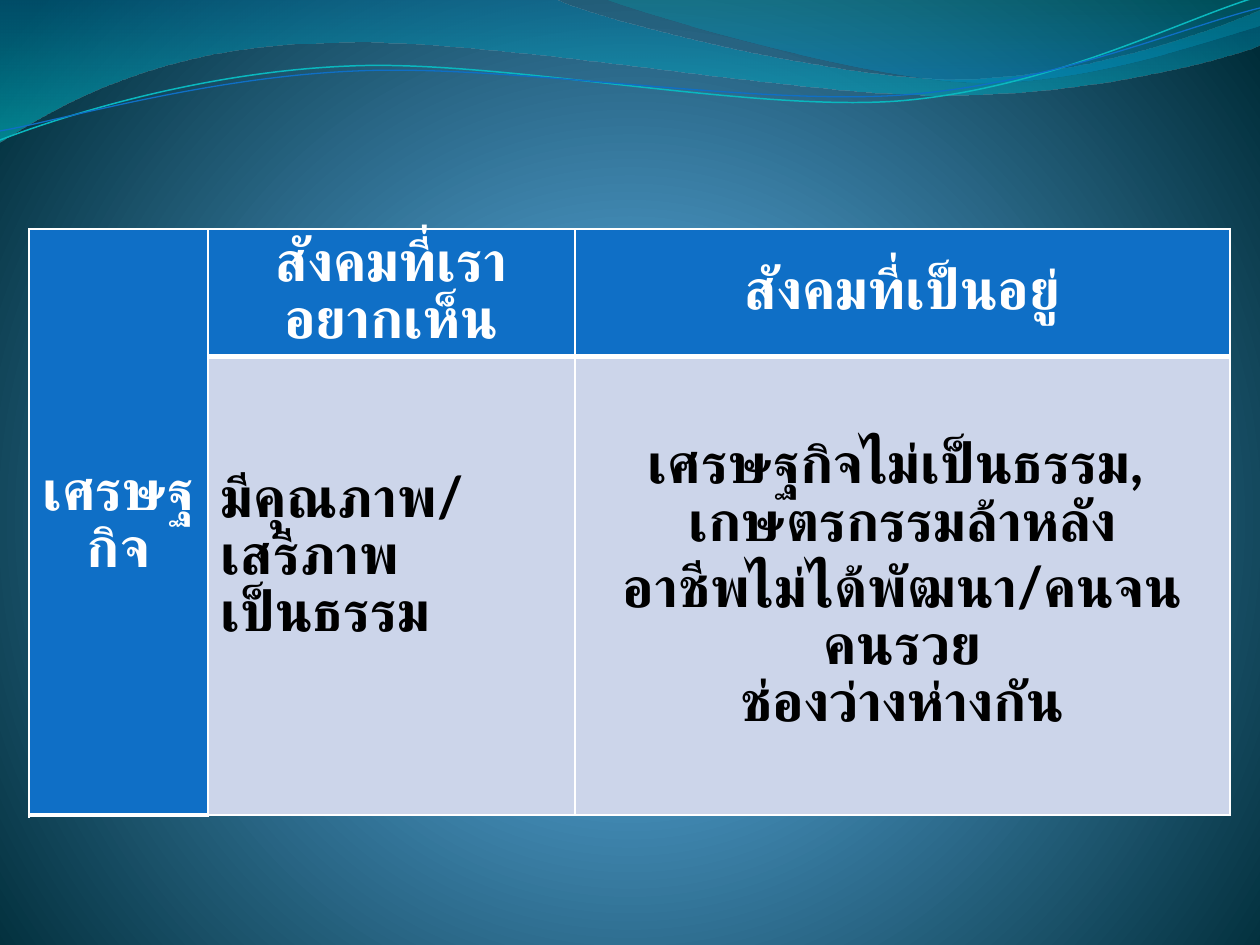
from pptx import Presentation
from pptx.dml.color import RGBColor
from pptx.enum.shapes import MSO_SHAPE
from pptx.enum.text import MSO_ANCHOR, PP_ALIGN
from pptx.oxml import parse_xml
from pptx.oxml.ns import nsdecls
from pptx.util import Pt

EMU_PER_PIXEL = 914400 / 126
FONT = "Lato"
LINE_SPACING = 0.85
WHITE, BLACK, BLUE, PALE_BLUE = "FFFFFF", "000000", "0F6FC6", "CCD5EA"
BORDER_SIDES = ("lnL", "lnR", "lnT", "lnB")


def px(length):
    return round(length * EMU_PER_PIXEL)


def color(hex_value):
    return RGBColor.from_string(hex_value)


def gradient_xml(stops, direction):
    """Gradient fill from (position %, colour, opacity %) stops."""
    stop_xml = "".join(
        f'<a:gs pos="{position * 1000}"><a:srgbClr val="{hex_value}">'
        f'<a:alpha val="{opacity * 1000}"/></a:srgbClr></a:gs>'
        for position, hex_value, opacity in stops)
    return (f'<a:gradFill {nsdecls("a")} rotWithShape="1">'
            f'<a:gsLst>{stop_xml}</a:gsLst>{direction}</a:gradFill>')


def set_background(slide):
    circle = ('<a:path path="circle">'
              '<a:fillToRect l="10000" t="110000" r="10000" b="100000"/></a:path>')
    stops = [(0, "4AA0D6", 100), (25, "4C98C7", 100), (100, "002C38", 100)]
    slide.background.fill.solid()
    properties = slide.element.cSld.find(".//{*}bgPr")
    properties.replace(properties[0], parse_xml(gradient_xml(stops, circle)))


def add_curve(slide, box, commands, closed):
    """Shape from M, L and C commands whose points are in slide px."""
    left, top, width, height = box
    tags = {"M": "moveTo", "L": "lnTo", "C": "cubicBezTo"}
    segments = ""
    for command, *points in commands:
        point_xml = "".join(f'<a:pt x="{px(x - left)}" y="{px(y - top)}"/>'
                            for x, y in points)
        segments += f"<a:{tags[command]}>{point_xml}</a:{tags[command]}>"
    ending = "<a:close/>" if closed else ""
    fill_mode = "norm" if closed else "none"
    geometry = parse_xml(
        f'<a:custGeom {nsdecls("a")}><a:avLst/><a:gdLst/><a:ahLst/><a:cxnLst/>'
        '<a:rect l="0" t="0" r="r" b="b"/><a:pathLst>'
        f'<a:path w="{px(width)}" h="{px(height)}" fill="{fill_mode}">'
        f"{segments}{ending}</a:path></a:pathLst></a:custGeom>")
    shape = slide.shapes.add_shape(MSO_SHAPE.RECTANGLE, *map(px, box))
    shape.shadow.inherit = False
    properties = shape.element.spPr
    properties.replace(properties.find("{*}prstGeom"), geometry)
    return shape


def add_wave(slide, box, commands, stops):
    shape = add_curve(slide, box, commands, closed=True)
    shape.line.fill.background()
    shape.fill.solid()
    properties = shape.element.spPr
    downward = '<a:lin ang="5400000" scaled="1"/>'
    properties.replace(properties.find("{*}solidFill"),
                       parse_xml(gradient_xml(stops, downward)))


def add_wave_line(slide, box, commands, hex_value, width):
    shape = add_curve(slide, box, commands, closed=False)
    shape.fill.background()
    shape.line.color.rgb = color(hex_value)
    shape.line.width = Pt(width)


def add_waves(slide):
    add_wave(slide, (-1, -1, 1262, 143), [
        ("M", (0, 0)), ("L", (554, -1)),
        ("C", (600, 21), (837, 79), (955, 79)),
        ("C", (1075, 79), (1207, 33), (1260, 11)),
        ("L", (1261, 45)),
        ("C", (1239, 55), (1096, 96), (940, 95)),
        ("C", (784, 95), (481, 35), (324, 43)),
        ("C", (163, 45), (58, 105), (-1, 142)),
    ], [(0, "0074A1", 45), (100, "00C6CF", 55)])
    add_wave(slide, (604, -1, 656, 88), [
        ("M", (604, -1)),
        ("C", (641, 14), (859, 78), (969, 82)),
        ("C", (1079, 87), (1211, 40), (1260, 26)),
        ("L", (1260, 0)),
    ], [(0, "00A1A9", 30), (80, "008BBF", 45)])
    add_wave_line(slide, (0, -3, 1257, 143), [
        ("M", (0, 140)),
        ("C", (60, 117), (199, 72), (349, 66)),
        ("C", (498, 59), (747, 112), (898, 101)),
        ("C", (1050, 89), (1182, 19), (1257, -3)),
    ], "0AB8BF", 0.85)
    add_wave_line(slide, (0, 8, 1260, 123), [
        ("M", (0, 131)),
        ("C", (59, 121), (207, 77), (357, 71)),
        ("C", (508, 64), (752, 106), (903, 95)),
        ("C", (1053, 84), (1186, 26), (1260, 8)),
    ], BLUE, 0.75)


def set_borders(cell, bottom_width):
    properties = cell._tc.get_or_add_tcPr()
    for index, side in enumerate(BORDER_SIDES):
        width = bottom_width if side == "lnB" else 1
        properties.insert(index, parse_xml(
            f'<a:{side} {nsdecls("a")} w="{Pt(width)}"><a:solidFill>'
            f'<a:srgbClr val="{WHITE}"/></a:solidFill></a:{side}>'))


def style_cell(cell, is_header):
    cell.fill.solid()
    cell.fill.fore_color.rgb = color(BLUE if is_header else PALE_BLUE)
    cell.vertical_anchor = MSO_ANCHOR.MIDDLE
    set_borders(cell, 3 if is_header else 1)


def write_cell(cell, lines, hex_value, alignment):
    frame = cell.text_frame
    for index, line in enumerate(lines):
        paragraph = frame.add_paragraph() if index else frame.paragraphs[0]
        paragraph.alignment = alignment
        paragraph.line_spacing = LINE_SPACING
        run = paragraph.add_run()
        run.text = line
        run.font.size = Pt(32)
        run.font.bold = True
        run.font.color.rgb = color(hex_value)
        run.font.name = FONT
        run.font._element.append(
            parse_xml(f'<a:cs {nsdecls("a")} typeface="{FONT}"/>'))


def add_society_table(slide, left, top, column_widths, row_heights):
    table = slide.shapes.add_table(
        len(row_heights), len(column_widths), px(left), px(top),
        px(sum(column_widths)), px(sum(row_heights))).table
    for column, width in zip(table.columns, column_widths):
        column.width = px(width)
    for row, height in zip(table.rows, row_heights):
        row.height = px(height)
    for row_index in range(len(row_heights)):
        for column_index in range(len(column_widths)):
            style_cell(table.cell(row_index, column_index),
                       is_header=row_index == 0 or column_index == 0)
    table.cell(0, 0).merge(table.cell(1, 0))

    headings = ["เศรษฐกิจ", "สังคมที่เราอยากเห็น", "สังคมที่เป็นอยู่"]
    for column_index, heading in enumerate(headings):
        write_cell(table.cell(0, column_index), [heading], WHITE, PP_ALIGN.CENTER)
    wished_cell = table.cell(1, 1)
    wished_cell.margin_bottom = px(63)
    write_cell(wished_cell, ["มีคุณภาพ/เสรีภาพ", "เป็นธรรม"], BLACK, PP_ALIGN.LEFT)
    current_cell = table.cell(1, 2)
    write_cell(current_cell, [
        "เศรษฐกิจไม่เป็นธรรม, ", "เกษตรกรรมล้าหลัง",
        "อาชีพไม่ได้พัฒนา/คนจนคนรวย", "ช่องว่างห่างกัน",
    ], BLACK, PP_ALIGN.CENTER)
    current_cell.text_frame.paragraphs[2].space_before = Pt(5)


def main():
    presentation = Presentation()
    presentation.slide_width = px(1260)
    presentation.slide_height = px(945)
    slide = presentation.slides.add_slide(presentation.slide_layouts[6])
    set_background(slide)
    add_waves(slide)
    add_society_table(slide, 29, 229, (179, 367, 655), (79, 459))
    presentation.save("out.pptx")


if __name__ == "__main__":
    main()
